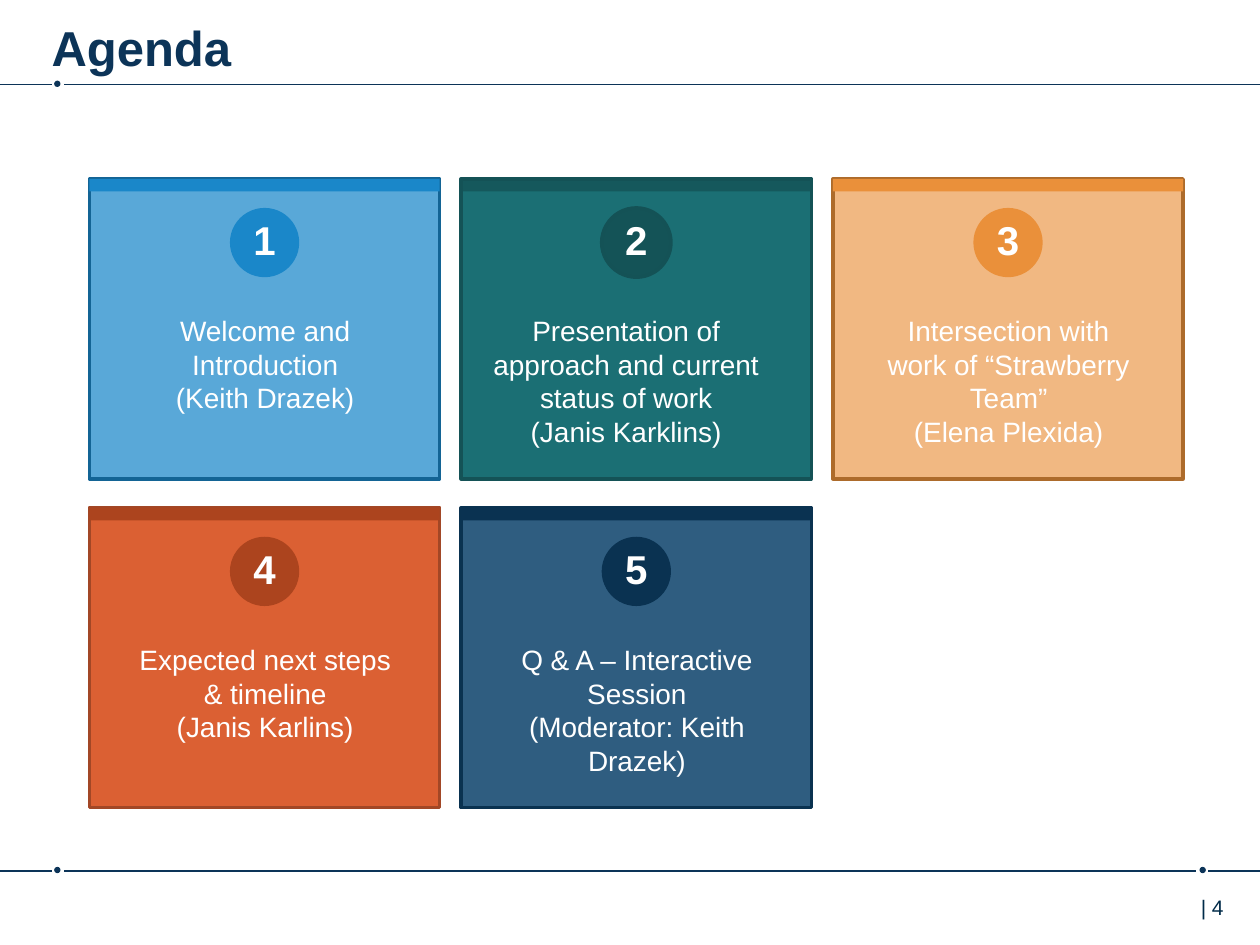
import pptx
from lxml import etree
from pptx.dml.color import RGBColor
from pptx.enum.shapes import MSO_CONNECTOR, MSO_SHAPE
from pptx.enum.text import MSO_ANCHOR, PP_ALIGN
from pptx.oxml.ns import qn
from pptx.util import Inches, Pt

FONT = "Arial"
NAVY = RGBColor(0x0C, 0x34, 0x58)
INK = RGBColor(0x00, 0x2B, 0x49)
WHITE = RGBColor(0xFF, 0xFF, 0xFF)
SKY = RGBColor(0x1A, 0x87, 0xC9)
SKY_EDGE = RGBColor(0x13, 0x64, 0x95)
TEAL = RGBColor(0x1B, 0x6F, 0x74)
TEAL_DARK = RGBColor(0x14, 0x53, 0x57)
TEAL_EDGE = RGBColor(0x14, 0x52, 0x56)
AMBER = RGBColor(0xEA, 0x90, 0x3A)
AMBER_EDGE = RGBColor(0xAD, 0x6B, 0x2B)
RUST = RGBColor(0xDB, 0x60, 0x33)
RUST_DARK = RGBColor(0xAC, 0x44, 0x1E)
RUST_EDGE = RGBColor(0xA2, 0x47, 0x26)
BLUE = RGBColor(0x0D, 0x43, 0x6C)
BLUE_DARK = RGBColor(0x0A, 0x32, 0x51)
BLUE_EDGE = RGBColor(0x0A, 0x32, 0x50)

# topic, speaker, fill, opacity %, accent, accent opacity %, edge,
# circle edge, text offset, text width
CARDS = [
    ("Welcome and Introduction", "(Keith Drazek)",
     SKY, 72, SKY, 100, SKY_EDGE, None, 0.26, 2.27),
    ("Presentation of approach and current status of work",
     "(Janis Karklins)",
     TEAL, 100, TEAL_DARK, 80, TEAL_EDGE, TEAL_EDGE, 0.09, 2.44),
    ("Intersection with work of “Strawberry Team”", "(Elena Plexida)",
     AMBER, 63, AMBER, 100, AMBER_EDGE, None, 0.26, 2.27),
    ("Expected next steps & timeline", "(Janis Karlins)",
     RUST, 100, RUST_DARK, 100, RUST_EDGE, None, 0.26, 2.27),
    ("Q & A – Interactive Session", "(Moderator: Keith Drazek)",
     BLUE, 86, BLUE_DARK, 100, BLUE_EDGE, None, 0.26, 2.27),
]
COLS = 3
LEFT, TOP = 0.71, 1.42
STEP_X, STEP_Y = 2.95, 2.61
CARD_W, CARD_H = 2.78, 2.38
BAR_H, DISC = 0.1, 0.55

# y, line spans, dot lefts
RULES = [
    (0.67, [(0, 0.41), (0.51, 10)], [0.43]),
    (6.91, [(0, 0.41), (0.51, 9.49), (9.59, 10)], [0.43, 9.52]),
]

deck = pptx.Presentation()
deck.slide_width, deck.slide_height = Inches(10), Inches(7.5)
slide = deck.slides.add_slide(deck.slide_layouts[5])
shapes = slide.shapes


def add_shape(kind, x, y, w, h, fill, alpha=100, edge=None):
    shape = shapes.add_shape(kind, Inches(x), Inches(y), Inches(w), Inches(h))
    shape.shadow.inherit = False
    shape.fill.solid()
    shape.fill.fore_color.rgb = fill
    if alpha < 100:
        color = shape.fill._xPr.find(qn("a:solidFill"))[0]
        etree.SubElement(color, qn("a:alpha"), val=str(alpha * 1000))
    if edge is None:
        shape.line.fill.background()
    else:
        shape.line.color.rgb = edge
        shape.line.width = Pt(2)
    return shape


def add_rule(start, end, y):
    line = shapes.add_connector(MSO_CONNECTOR.STRAIGHT, Inches(start),
                                Inches(y), Inches(end), Inches(y))
    line.line.color.rgb = NAVY
    line.line.width = Pt(1)
    etree.SubElement(line._element.spPr, qn("a:effectLst"))


def write(frame, lines, size, color, bold=False, align=PP_ALIGN.CENTER):
    frame.word_wrap = True
    for i, text in enumerate(lines):
        para = frame.paragraphs[0] if i == 0 else frame.add_paragraph()
        para.text = text
        para.alignment = align
        font = para.font
        font.name, font.size, font.bold = FONT, Pt(size), bold
        font.color.rgb = color


def add_text(x, y, w, h, *style):
    box = shapes.add_textbox(Inches(x), Inches(y), Inches(w), Inches(h))
    write(box.text_frame, *style)
    return box.text_frame


def add_card(index, card):
    (topic, speaker, fill, alpha, accent, bar_alpha, edge, ring,
     shift, width) = card
    row, col = divmod(index, COLS)
    x, y = LEFT + col * STEP_X, TOP + row * STEP_Y
    add_shape(MSO_SHAPE.RECTANGLE, x, y, CARD_W, CARD_H, fill, alpha, edge)
    add_shape(MSO_SHAPE.RECTANGLE, x, y, CARD_W, BAR_H, accent, bar_alpha)
    add_shape(MSO_SHAPE.OVAL, x + (CARD_W - DISC) / 2, y + 0.23,
              DISC, DISC, accent, 100, ring)
    add_text(x + shift, y + 1.02, width, 1.18, [topic, speaker], 16, WHITE)
    add_text(x, y + 0.24, CARD_W, 0.49, [str(index + 1)], 23, WHITE, True)


for y, spans, dots in RULES:
    for start, end in spans:
        add_rule(start, end, y)
    for x in dots:
        add_shape(MSO_SHAPE.OVAL, x, y - 0.03, 0.05, 0.05, NAVY)

for index, card in enumerate(CARDS):
    add_card(index, card)

number = add_text(9.29, 7.05, 0.87, 0.4, ["| 4"], 12, INK, False,
                  PP_ALIGN.LEFT)
number.margin_left = Inches(0.24)

title = shapes.title
title.left, title.top = Inches(0.41), Inches(0.05)
title.width, title.height = Inches(8.76), Inches(0.49)
frame = title.text_frame
frame.margin_left = frame.margin_right = frame.margin_bottom = 0
frame.margin_top = Inches(0.09)
frame.vertical_anchor = MSO_ANCHOR.TOP
write(frame, ["Agenda"], 28, NAVY, True, PP_ALIGN.LEFT)

deck.save("out.pptx")
